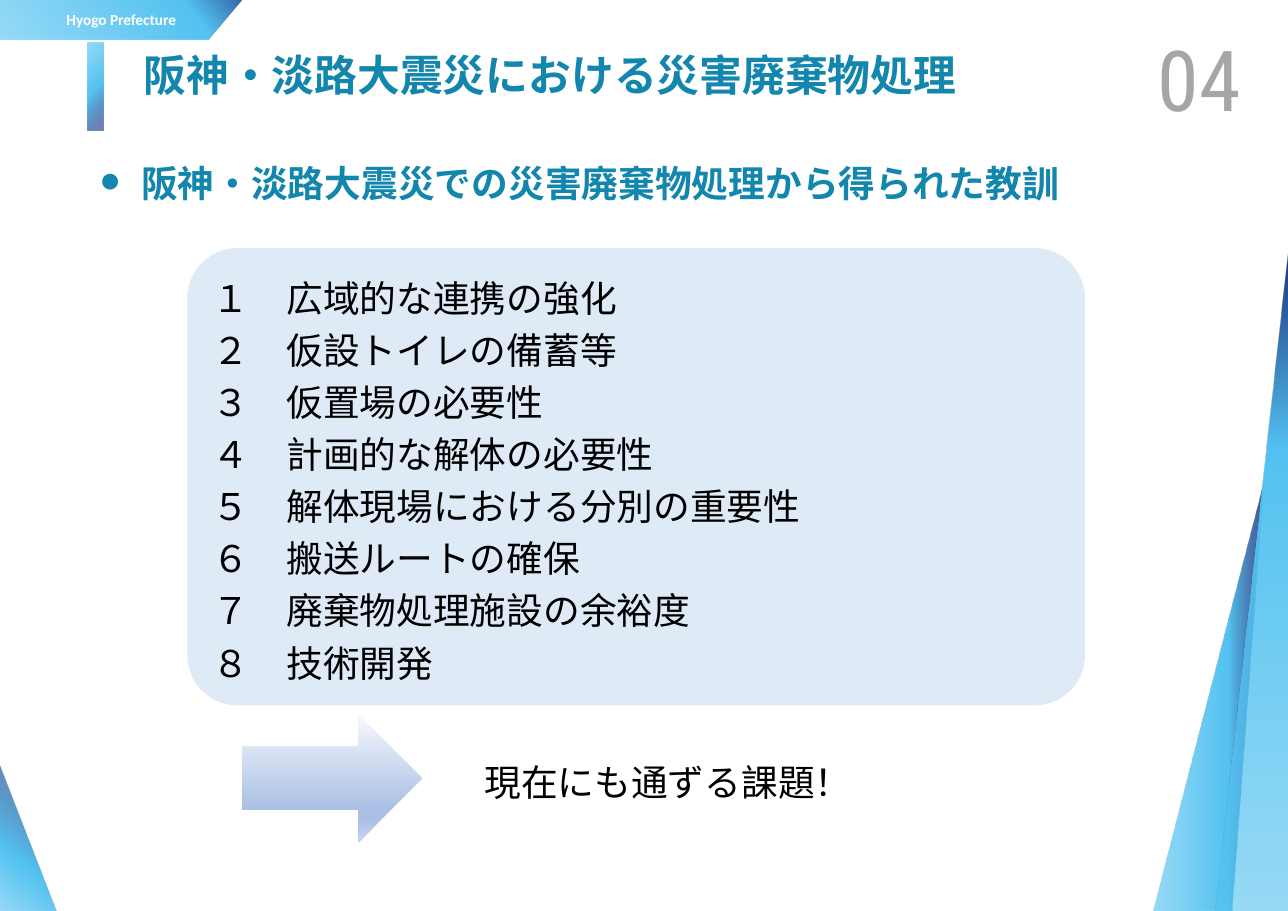
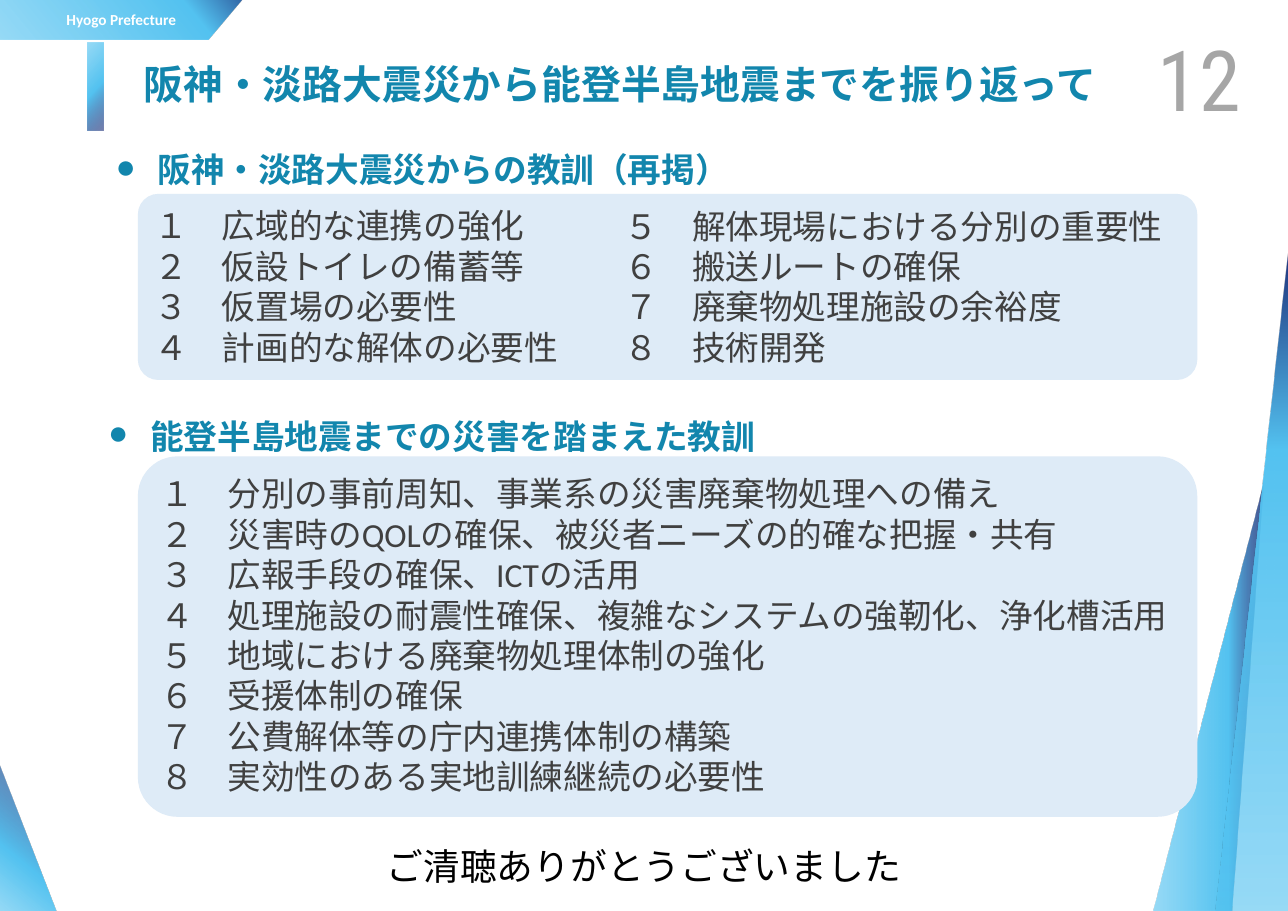
import dataclasses
import typing

import pptx
import pptx.dml.color
import pptx.enum.shapes
import pptx.enum.text
import pptx.oxml
import pptx.oxml.ns
import pptx.util

Cm = pptx.util.Cm
Pt = pptx.util.Pt
Kind = pptx.enum.shapes.MSO_SHAPE
Align = pptx.enum.text.PP_ALIGN
Anchor = pptx.enum.text.MSO_ANCHOR
qn = pptx.oxml.ns.qn


class Stop(typing.NamedTuple):
    pos: int
    color: str
    alpha: int = 100


class Box(typing.NamedTuple):
    x: float
    y: float
    w: float
    h: float

    def emu(self) -> list[int]:
        return [Cm(side) for side in self]


@dataclasses.dataclass(frozen=True)
class Style:
    size: int
    color: str
    font: str = "Calibri"
    bold: bool = False


@dataclasses.dataclass(frozen=True)
class Theme:
    sky: str = "54C3F1"
    navy: str = "1C2B76"
    steel: str = "336AA9"
    panel: str = "DEEBF7"
    tag: Style = Style(10, "FFFFFF", bold=True)
    number: Style = Style(55, "A6A6A6", "Roboto Condensed")
    title: Style = Style(28, "1286AD", "Arial", True)
    long: Style = Style(26, "1286AD", "Arial", True)
    head: Style = Style(24, "1286AD", "Arial", True)
    sub: Style = Style(22, "1286AD", "Arial", True)
    list: Style = Style(24, "000000")
    small: Style = Style(22, "404040")
    arrow: tuple[Stop, ...] = (Stop(0, "F6F8FC"), Stop(74, "ABC0E4"),
                               Stop(83, "ABC0E4"), Stop(100, "C7D5ED"))

    def glow(self, mid: int, alpha: int = 100) -> tuple[Stop, ...]:
        return (Stop(0, self.sky, 60), Stop(mid, self.sky),
                Stop(100, self.navy, alpha))


THEME = Theme()


@dataclasses.dataclass(frozen=True)
class Head:
    text: str
    box: Box


@dataclasses.dataclass(frozen=True)
class Page:
    layout: int
    number: str
    title: str
    place: Box
    style: Style
    sub: Style
    heads: tuple[Head, ...]


LESSONS = (
    "１　広域的な連携の強化",
    "２　仮設トイレの備蓄等",
    "３　仮置場の必要性",
    "４　計画的な解体の必要性",
    "５　解体現場における分別の重要性",
    "６　搬送ルートの確保",
    "７　廃棄物処理施設の余裕度",
    "８　技術開発",
)
RECENT = (
    "１　分別の事前周知、事業系の災害廃棄物処理への備え",
    "２　災害時のQOLの確保、被災者ニーズの的確な把握・共有",
    "３　広報手段の確保、ICTの活用",
    "４　処理施設の耐震性確保、複雑なシステムの強靭化、浄化槽活用",
    "５　地域における廃棄物処理体制の強化",
    "６　受援体制の確保",
    "７　公費解体等の庁内連携体制の構築",
    "８　実効性のある実地訓練継続の必要性",
)
FIRST = Page(
    1, "04", "阪神・淡路大震災における災害廃棄物処理",
    Box(3.18, 0.99, 20.57, 2.54), THEME.title, THEME.head,
    (Head("阪神・淡路大震災での災害廃棄物処理から得られた教訓",
          Box(2.03, 3.96, 23.01, 0.89)),))
LAST = Page(
    3, "12", "阪神・淡路大震災から能登半島地震までを振り返って",
    Box(3.18, 1.24, 23.34, 2.54), THEME.long, THEME.sub,
    (Head("阪神・淡路大震災からの教訓（再掲）", Box(2.41, 3.5, 15.21, 1.14)),
     Head("能登半島地震までの災害を踏まえた教訓", Box(2.24, 9.68, 20.88, 1.07))))


def rgb(color: str) -> pptx.dml.color.RGBColor:
    return pptx.dml.color.RGBColor.from_string(color)


def write(shape, lines: typing.Sequence[str], style: Style,
          align=Align.LEFT, anchor=Anchor.TOP, pitch=1.0) -> None:
    frame = shape.text_frame
    frame.word_wrap = True
    frame.auto_size = pptx.enum.text.MSO_AUTO_SIZE.NONE
    frame.vertical_anchor = anchor
    for index, line in enumerate(lines):
        para = frame.add_paragraph() if index else frame.paragraphs[0]
        para.alignment = align
        para.line_spacing = pitch
        para.space_before = Pt(0)
        run = para.add_run()
        run.text = line
        run.font.size = Pt(style.size)
        run.font.name = style.font
        run.font.bold = style.bold
        run.font.color.rgb = rgb(style.color)


def plain(shape):
    shape.shadow.inherit = False
    shape.line.fill.background()
    return shape


def blend(shape, stops: typing.Sequence[Stop], angle: int):
    plain(shape).fill.background()
    marks = "".join(
        f'<a:gs pos="{stop.pos * 1000}"><a:srgbClr val="{stop.color}">'
        f'<a:alpha val="{stop.alpha * 1000}"/></a:srgbClr></a:gs>'
        for stop in stops)
    grad = pptx.oxml.parse_xml(
        f'<a:gradFill {pptx.oxml.ns.nsdecls("a")} rotWithShape="1">'
        f'<a:gsLst>{marks}</a:gsLst>'
        f'<a:lin ang="{angle * 60000}" scaled="0"/></a:gradFill>')
    props = shape.element.spPr
    props.replace(props.find(qn("a:noFill")), grad)
    return shape


def outline(slide, points: typing.Sequence[tuple[float, float]]):
    start, *rest = [(Cm(x), Cm(y)) for x, y in points]
    path = slide.shapes.build_freeform(*start)
    path.add_line_segments(rest, close=True)
    return path.convert_to_shape()


def form(slide, kind, box: Box):
    return slide.shapes.add_shape(kind, *box.emu())


def label(slide, text: typing.Sequence[str], box: Box, style: Style,
          **kwargs) -> None:
    write(slide.shapes.add_textbox(*box.emu()), text, style, **kwargs)


def panel(slide, lines: typing.Sequence[str], box: Box, style: Style,
          pitch=1.0) -> None:
    shape = plain(form(slide, Kind.ROUNDED_RECTANGLE, box))
    shape.adjustments[0] = 0.11
    shape.fill.solid()
    shape.fill.fore_color.rgb = rgb(THEME.panel)
    write(shape, lines, style, pitch=pitch)


def settle(shape, box: Box) -> None:
    shape.left, shape.top, shape.width, shape.height = box.emu()


def bullet(shape, head: Head, style: Style) -> None:
    settle(shape, head.box)
    props = shape.text_frame.paragraphs[0]._p.get_or_add_pPr()
    props.set("marL", str(Cm(0.97)))
    props.set("indent", str(-Cm(0.97)))
    mark = pptx.oxml.parse_xml(
        f'<a:buChar {pptx.oxml.ns.nsdecls("a")} char="●"/>')
    props.append(mark)
    write(shape, [head.text], style, anchor=Anchor.MIDDLE, pitch=0.5)


def dress(deck, slide) -> None:
    tag = outline(slide, [(0, 0), (5.59, 0), (4.8, 0.91), (0, 0.91)])
    blend(tag, (Stop(0, THEME.sky, 60), Stop(78, THEME.sky),
                Stop(99, THEME.steel), Stop(100, THEME.navy, 62)), 320)
    write(tag, ["Hyogo Prefecture"], THEME.tag, Align.CENTER, Anchor.MIDDLE)
    left = form(slide, Kind.RIGHT_TRIANGLE, Box(0, 17.6, 1.3, 3.4))
    blend(left, THEME.glow(35, 60), 310)
    shard = outline(slide, [(28.4, 21), (29.13, 11.1), (26.59, 21)])
    blend(shard, THEME.glow(68, 80), 0)
    right = form(slide, Kind.RIGHT_TRIANGLE, Box(28.04, 5.59, 1.66, 15.41))
    blend(right, THEME.glow(69), 270)
    right.element.spPr.find(qn("a:xfrm")).set("flipH", "1")
    bar = form(slide, Kind.RECTANGLE, Box(2.03, 0.99, 0.36, 2.01))
    blend(bar, THEME.glow(53, 60), 40)
    for index, shape in enumerate((tag, left, shard, right, bar), 20):
        shape.element.nvSpPr.cNvPr.set("id", str(index))
        deck.slide_master.shapes.element.append(shape.element)


def start(deck, page: Page):
    slide = deck.slides.add_slide(deck.slide_layouts[page.layout])
    title = slide.shapes.title
    settle(title, page.place)
    frame = title.text_frame
    frame.margin_left = frame.margin_right = Cm(0.13)
    frame.margin_top = frame.margin_bottom = Cm(0.13)
    write(title, [page.title], page.style)
    for index, head in enumerate(page.heads, 1):
        bullet(slide.placeholders[index], head, page.sub)
    label(slide, [page.number], Box(25.68, 1.24, 3.18, 1.12), THEME.number,
          align=Align.RIGHT, anchor=Anchor.MIDDLE)
    return slide


def main() -> None:
    deck = pptx.Presentation()
    deck.slide_width, deck.slide_height = Cm(29.7), Cm(21)

    slide = start(deck, FIRST)
    dress(deck, slide)
    panel(slide, LESSONS, Box(4.32, 5.72, 20.7, 10.54), THEME.list, Pt(34))
    arrow = form(slide, Kind.RIGHT_ARROW, Box(5.59, 16.48, 4.14, 2.92))
    blend(arrow, THEME.arrow, 90)
    label(slide, ["現在にも通ずる課題！"], Box(10.92, 17.4, 13.51, 1.27),
          THEME.list)

    slide = start(deck, LAST)
    panel(slide, LESSONS[:4], Box(3.18, 4.47, 24.43, 4.29), THEME.small)
    label(slide, LESSONS[4:], Box(14.16, 4.61, 14.4, 4), THEME.small)
    panel(slide, RECENT, Box(3.18, 10.52, 24.43, 8.31), THEME.small)
    label(slide, ["ご清聴ありがとうございました"],
          Box(5.36, 19.33, 18.97, 1.27), THEME.list, align=Align.CENTER)

    deck.save("out.pptx")


if __name__ == "__main__":
    main()
